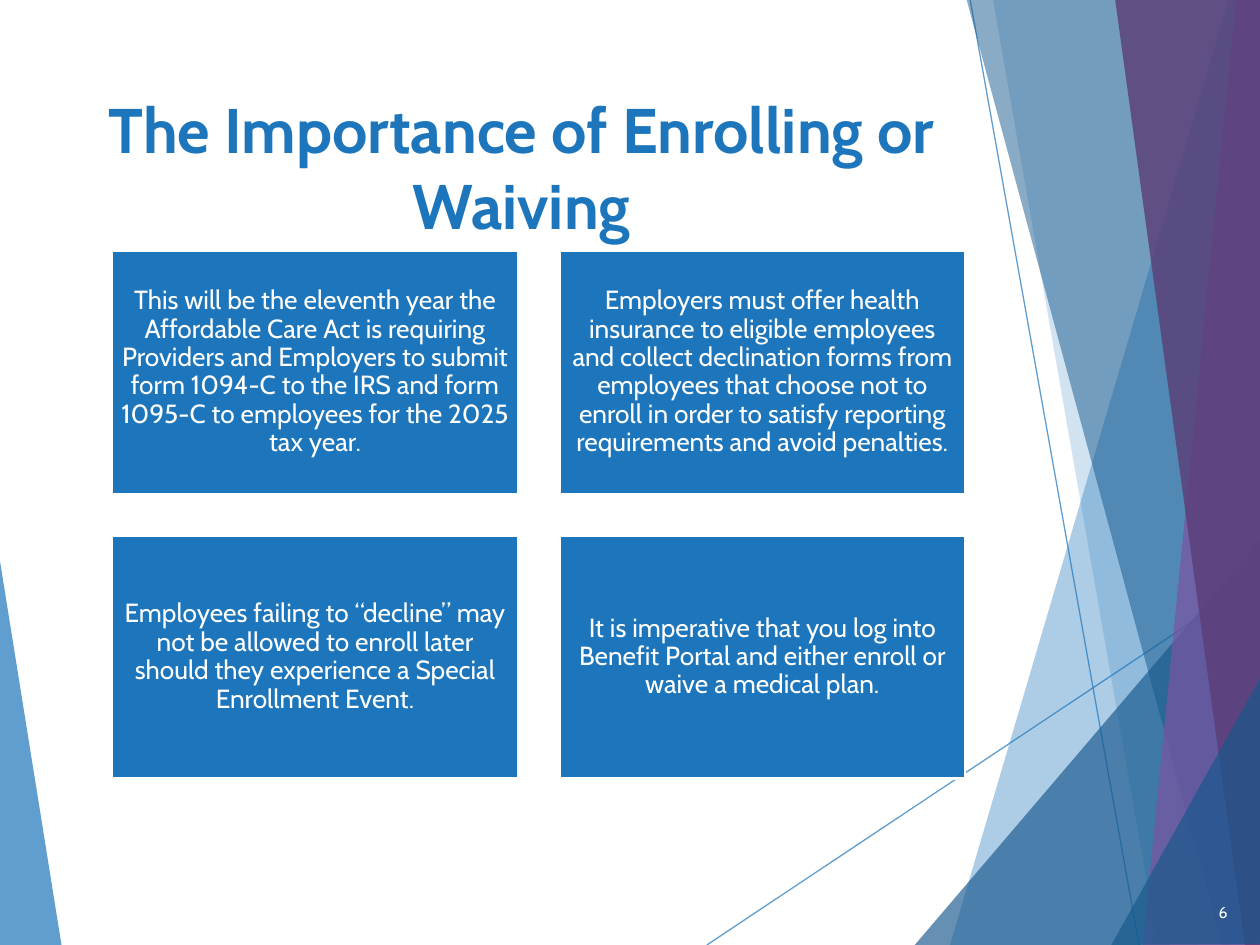
from lxml import etree
from pptx import Presentation
from pptx.dml.color import RGBColor
from pptx.enum.shapes import MSO_CONNECTOR, MSO_SHAPE
from pptx.enum.text import MSO_ANCHOR, PP_ALIGN
from pptx.oxml.ns import qn
from pptx.util import Inches, Pt

STRAIGHT = MSO_CONNECTOR.STRAIGHT
RECTANGLE = MSO_SHAPE.RECTANGLE
TOP, MIDDLE = MSO_ANCHOR.TOP, MSO_ANCHOR.MIDDLE
CENTER, RIGHT = PP_ALIGN.CENTER, PP_ALIGN.RIGHT

FONT = "Cabin"
COLORS = {
    "blue": "1D76BB",
    "navy": "16588C",
    "violet": "7A54A1",
    "plum": "5B3F79",
    "white": "FFFFFF",
}

TITLE = "The Importance of Enrolling or Waiving"
PAGE_NUMBER = "6"
CARDS = [
    "This will be the eleventh year the Affordable Care Act is requiring Providers "
    "and Employers to submit form 1094-C to the IRS and form 1095-C to employees "
    "for the 2025 tax year.",
    "Employers must offer health insurance to eligible employees and collect "
    "declination forms from employees that choose not to enroll in order to satisfy "
    "reporting requirements and avoid penalties.",
    "Employees failing to “decline” may not be allowed to enroll later should they "
    "experience a Special Enrollment Event.",
    "It is imperative that you log into Benefit Portal and either enroll or waive a "
    "medical plan.",
]
CARD_LEFT, CARD_TOP = 0.89, 1.99
CARD_WIDTH, CARD_HEIGHT = 3.22, 1.93
CARD_GAP = 0.33
CARD_COLUMNS = 2

LEFT_FACET = ("blue", 70, [(-0.01, 4.39), (0.49, 7.51), (-0.01, 7.5)])
RAYS = [((5.61, 7.5), (10.01, 4.57)), ((7.7, 0), (9.04, 7.5))]
RIGHT_FACETS = [
    ("blue", 36, [(9.75, 0), (7.54, 7.5), (10.02, 7.51), (10.01, 0.01)]),
    ("blue", 20, [(7.88, -0.01), (9.19, 7.5), (10.01, 7.5), (10.01, -0.01)]),
    ("navy", 66, [(7.26, 7.5), (10, 4.29), (10.01, 7.5)]),
    ("navy", 50, [(7.67, -0.01), (9.7, 7.5), (10.01, 7.49), (10.01, -0.01)]),
    ("violet", 70, [(9.81, -0.01), (9.07, 7.5), (10.01, 7.5), (10, -0.01)]),
    ("plum", 82, [(8.85, -0.01), (9.88, 7.5), (10.02, 7.5), (10, -0.01)]),
    ("navy", 66, [(8.82, 7.5), (10.02, 5.35), (10.02, 7.49)]),
]


def rgb(name):
    return RGBColor.from_string(COLORS[name])


def set_opacity(shape, percent):
    color = next(shape._element.spPr.iter(qn("a:srgbClr")))
    etree.SubElement(color, qn("a:alpha")).set("val", str(percent * 1000))


def add_facet(page, color, opacity, corners):
    points = [(Inches(x), Inches(y)) for x, y in corners]
    builder = page.shapes.build_freeform(*points[0])
    builder.add_line_segments(points[1:], close=True)
    facet = builder.convert_to_shape()
    facet.shadow.inherit = False
    facet.fill.solid()
    facet.fill.fore_color.rgb = rgb(color)
    facet.line.fill.background()
    set_opacity(facet, opacity)


def add_ray(page, start, end):
    ray = page.shapes.add_connector(STRAIGHT, *map(Inches, start + end))
    ray.line.color.rgb = rgb("blue")
    ray.line.width = Pt(0.75)
    set_opacity(ray, 70)
    etree.SubElement(ray._element.spPr, qn("a:effectLst"))


def write(box, text, size, color, align, anchor, bold=False):
    frame = box.text_frame
    frame.word_wrap = True
    frame.vertical_anchor = anchor
    para = frame.paragraphs[0]
    para.text = text
    para.alignment = align
    para.font.name = FONT
    para.font.size = Pt(size)
    para.font.bold = bold
    para.font.color.rgb = rgb(color)
    return frame


def add_card(page, index, text):
    row, column = divmod(index, CARD_COLUMNS)
    left = CARD_LEFT + column * (CARD_WIDTH + CARD_GAP)
    top = CARD_TOP + row * (CARD_HEIGHT + CARD_GAP)
    card = page.shapes.add_shape(
        RECTANGLE, *map(Inches, (left, top, CARD_WIDTH, CARD_HEIGHT)))
    card.shadow.inherit = False
    card.fill.solid()
    card.fill.fore_color.rgb = rgb("blue")
    card.line.color.rgb = rgb("white")
    card.line.width = Pt(1.5)
    frame = write(card, text, 15, "white", CENTER, MIDDLE)
    frame.margin_left = frame.margin_right = Inches(0.06)
    frame.margin_top = frame.margin_bottom = Inches(0.06)
    frame.paragraphs[0].line_spacing = 0.9


def main():
    deck = Presentation()
    deck.slide_width, deck.slide_height = Inches(10), Inches(7.5)
    page = deck.slides.add_slide(deck.slide_layouts[6])

    add_facet(page, *LEFT_FACET)
    for start, end in RAYS:
        add_ray(page, start, end)
    for facet in RIGHT_FACETS:
        add_facet(page, *facet)

    title = page.shapes.add_textbox(*map(Inches, (0.67, 0.67, 6.94, 1.44)))
    write(title, TITLE, 36, "blue", CENTER, TOP, bold=True)
    for index, text in enumerate(CARDS):
        add_card(page, index, text)
    number = page.shapes.add_textbox(*map(Inches, (9.33, 6.98, 0.51, 0.52)))
    write(number, PAGE_NUMBER, 9, "white", RIGHT, MIDDLE)

    deck.save("out.pptx")


if __name__ == "__main__":
    main()
